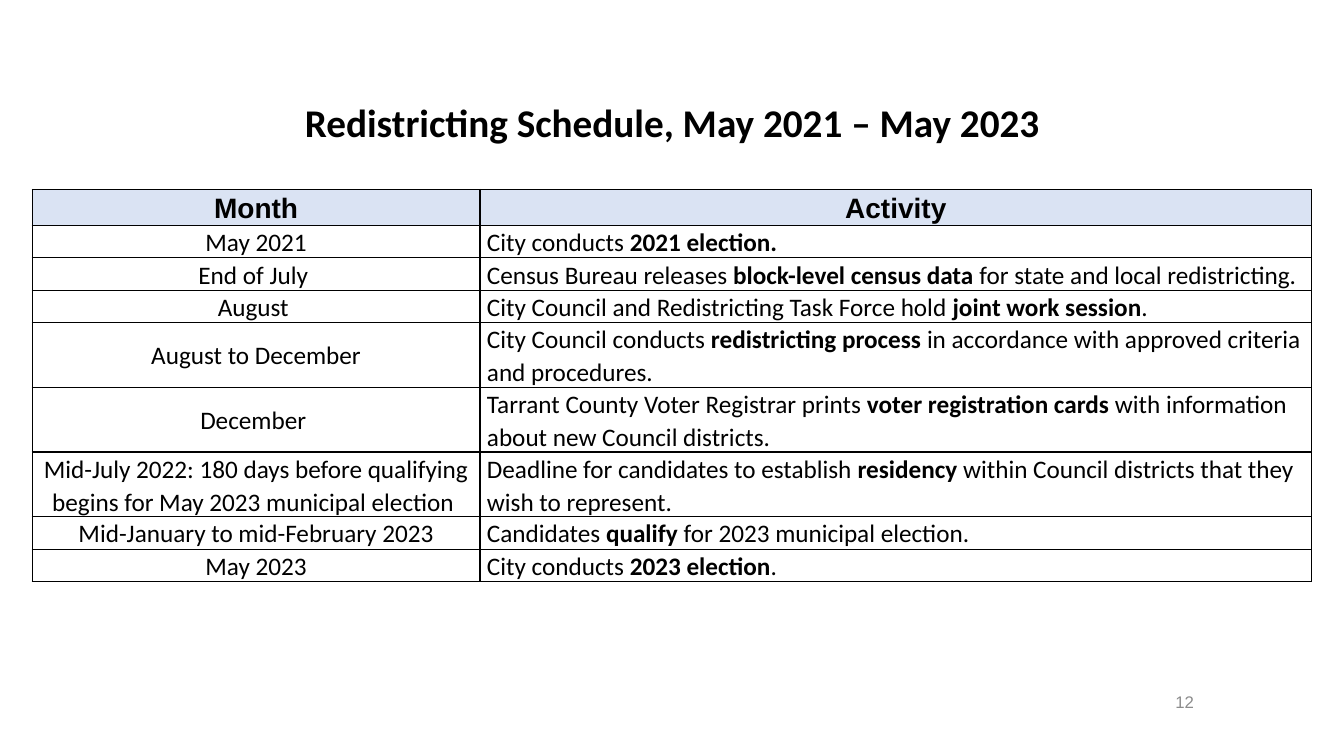
import dataclasses

import lxml.etree
import pptx
import pptx.dml.color
import pptx.enum.text
import pptx.oxml.ns
import pptx.util

Inches = pptx.util.Inches
Align = pptx.enum.text.PP_ALIGN
Anchor = pptx.enum.text.MSO_ANCHOR


@dataclasses.dataclass(frozen=True)
class Theme:
    ink: str = "000000"
    muted: str = "8C8C8C"
    header_fill: str = "DAE3F3"
    body_font: str = "Calibri"
    label_font: str = "Arial"
    title_size: int = 28
    header_size: int = 20
    body_size: int = 18
    number_size: int = 12
    border_width: int = 1


SCHEDULE = [
    ("May 2021", ["City conducts ", "2021 election."]),
    ("End of July ", ["Census Bureau releases ", "block-level census data ",
                      "for state and local redistricting."]),
    ("August ", ["City Council and Redistricting Task Force hold ", "joint work session", "."]),
    ("August to December", ["City Council conducts ", "redistricting process ",
                            "in accordance with approved criteria and procedures."]),
    ("December ", ["Tarrant County Voter Registrar prints ", "voter registration cards ",
                   "with information about new Council districts."]),
    ("Mid-July 2022: 180 days before qualifying begins for May 2023 municipal election ",
     ["Deadline for candidates to establish ", "residency",
      " within Council districts that they wish to represent."]),
    ("Mid-January to mid-February 2023",
     ["Candidates ", "qualify", " for 2023 municipal election."]),
    ("May 2023", ["City conducts ", "2023 election", "."]),
]


class SlideBuilder:
    def __init__(self, slide, theme):
        self.slide = slide
        self.theme = theme

    def style(self, paragraph, font_name, size, color, alignment, spacing, bold=None):
        paragraph.alignment = alignment
        paragraph.line_spacing = spacing
        font = paragraph.font
        font.name = font_name
        font.size = pptx.util.Pt(size)
        font.bold = bold
        font.color.rgb = pptx.dml.color.RGBColor.from_string(color)

    def text(self, text, left, top, width, height, *style):
        shape = self.slide.shapes.add_textbox(
            Inches(left), Inches(top), Inches(width), Inches(height))
        frame = shape.text_frame
        frame.word_wrap = True
        frame.vertical_anchor = Anchor.MIDDLE
        paragraph = frame.paragraphs[0]
        paragraph.add_run().text = text
        self.style(paragraph, *style)

    def borders(self, cell):
        properties = cell._tc.get_or_add_tcPr()
        for position, side in enumerate(("lnL", "lnR", "lnT", "lnB")):
            line = lxml.etree.Element(
                pptx.oxml.ns.qn(f"a:{side}"), w=str(pptx.util.Pt(self.theme.border_width)))
            fill = lxml.etree.SubElement(line, pptx.oxml.ns.qn("a:solidFill"))
            lxml.etree.SubElement(fill, pptx.oxml.ns.qn("a:srgbClr"), val=self.theme.ink)
            properties.insert(position, line)

    def cell(self, cell, runs, alignment, header):
        theme = self.theme
        cell.margin_left = cell.margin_right = Inches(0.07)
        cell.margin_top = cell.margin_bottom = 0
        cell.vertical_anchor = Anchor.MIDDLE
        if header:
            cell.fill.solid()
            cell.fill.fore_color.rgb = pptx.dml.color.RGBColor.from_string(theme.header_fill)
        else:
            cell.fill.background()
        self.borders(cell)
        paragraph = cell.text_frame.paragraphs[0]
        for index, text in enumerate(runs):
            run = paragraph.add_run()
            run.text = text
            if len(runs) > 1:
                run.font.bold = index == 1
        font_name = theme.label_font if header else theme.body_font
        size = theme.header_size if header else theme.body_size
        self.style(paragraph, font_name, size, theme.ink, alignment, 1.07, header)

    def schedule(self, left, top, column_widths, row_height, height):
        rows = [("Month", ["Activity"]), *SCHEDULE]
        frame = self.slide.shapes.add_table(
            len(rows), len(column_widths), Inches(left), Inches(top),
            Inches(sum(column_widths)), Inches(height))
        table = frame.table
        for column, width in zip(table.columns, column_widths):
            column.width = Inches(width)
        for index, (month, activity) in enumerate(rows):
            header = index == 0
            table.rows[index].height = Inches(row_height)
            self.cell(table.cell(index, 0), [month], Align.CENTER, header)
            self.cell(table.cell(index, 1), activity,
                      Align.CENTER if header else Align.LEFT, header)
        frame.height = Inches(height)


def main():
    presentation = pptx.Presentation()
    presentation.slide_width = Inches(13.33)
    presentation.slide_height = Inches(7.5)
    slide = presentation.slides.add_slide(presentation.slide_layouts[6])
    theme = Theme()
    builder = SlideBuilder(slide, theme)
    builder.text("Redistricting Schedule, May 2021 – May 2023", 0.32, 0.93, 12.69, 0.61,
                 theme.body_font, theme.title_size, theme.ink, Align.CENTER, 0.9, True)
    builder.text("12", 8.94, 6.76, 3, 0.4,
                 theme.label_font, theme.number_size, theme.muted, Align.RIGHT, 1.0)
    builder.schedule(0.32, 1.88, (4.44, 8.25), 0.29, 3.75)
    presentation.save("out.pptx")


if __name__ == "__main__":
    main()
